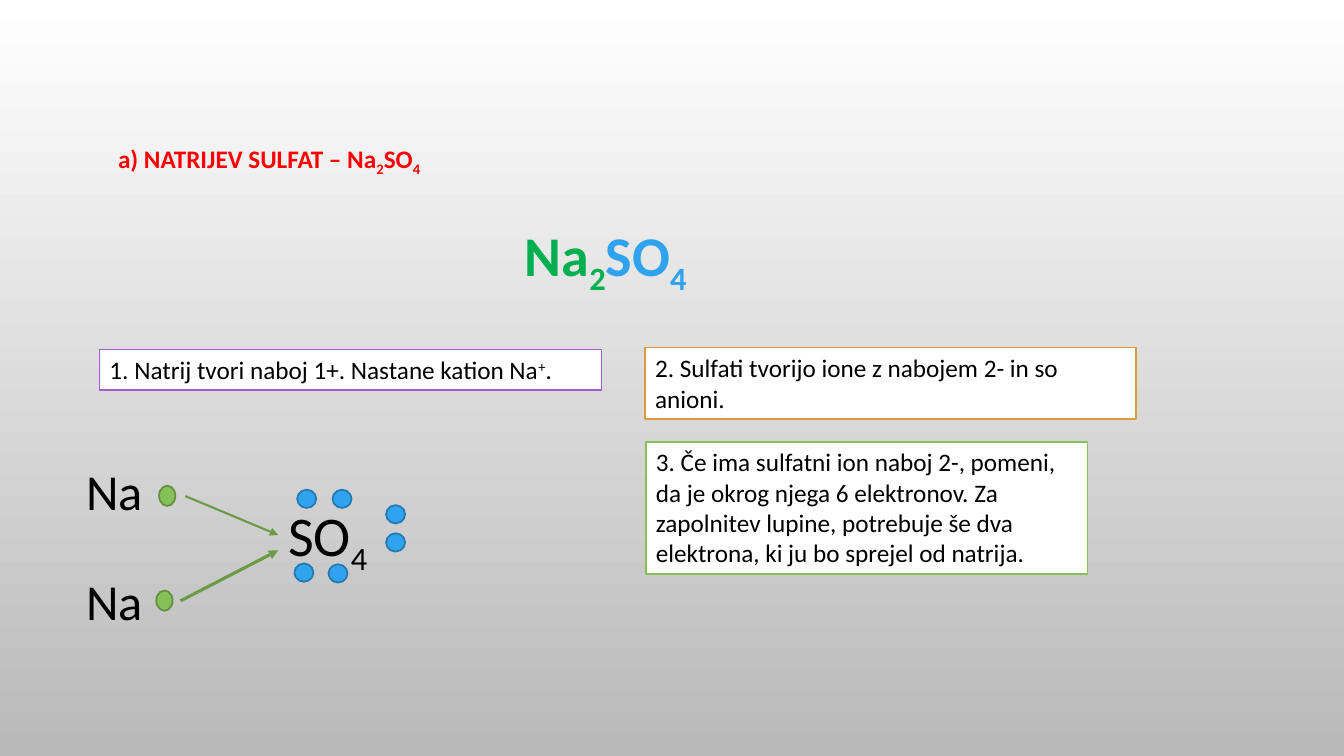
import dataclasses

import pptx
import pptx.dml.color
import pptx.enum.dml
import pptx.enum.shapes
import pptx.enum.text
import pptx.oxml
import pptx.oxml.ns
import pptx.util
from pptx.util import Cm

COLOURS = {
    "white": "FFFFFF", "grey": "B9B9B9", "black": "000000", "red": "FF0000",
    "sodium": "00B050", "sulfate": "2FA3EE", "sulfate edge": "2379B0",
    "electron": "86C157", "electron edge": "638F40", "arrow": "6B9B46",
    "purple": "A35DD1", "orange": "D99C3F",
}
SUB, SUPER = -25, 30
EDGE = 1.25


@dataclasses.dataclass
class Span:
    text: str
    colour: str = "black"
    baseline: int = 0


@dataclasses.dataclass
class Label:
    place: tuple[float, float, float, float]
    spans: list[Span]
    size: int = 18
    bold: bool = False
    edge: str | None = None


@dataclasses.dataclass
class Electrons:
    fill: str
    edge: str
    size: tuple[float, float]
    corners: list[tuple[float, float]]


@dataclasses.dataclass
class Arrow:
    start: tuple[float, float]
    end: tuple[float, float]
    weight: float


TITLE = Label((2.72, 3.48, 26.95, 1.02), [
    Span("a) NATRIJEV SULFAT – Na", "red"), Span("2", "red", SUB),
    Span("SO", "red"), Span("4", "red", SUB)], bold=True)
SULFATE_ION = Label((7.01, 12.5, 4.37, 1.96), [Span("SO"), Span("4", baseline=SUB)], 40)
LABELS = [
    Label((12.98, 5.44, 5.64, 1.96), [
        Span("Na", "sodium"), Span("2", "sodium", SUB),
        Span("SO", "sulfate"), Span("4", "sulfate", SUB)], 40, True),
    Label((2.51, 8.81, 12.65, 1.02), [
        Span("1. Natrij tvori naboj 1+. Nastane kation Na"),
        Span("+", baseline=SUPER), Span(".")], edge="purple"),
    Label((16.26, 8.76, 12.37, 1.8), [
        Span("2. Sulfati tvorijo ione z nabojem 2- in so anioni.")], edge="orange"),
    Label((16.28, 11.13, 11.13, 3.33), [
        Span("3. Če ima sulfatni ion naboj 2-, pomeni, da je okrog njega "
             "6 elektronov. Za zapolnitev lupine, potrebuje še dva elektrona, "
             "ki ju bo sprejel od natrija.")], edge="electron"),
    Label((1.93, 11.46, 2.11, 1.8), [Span("Na")], 36),
    Label((1.93, 14.25, 2.41, 1.8), [Span("Na")], 36),
]
SODIUM_ELECTRONS = Electrons(
    "electron", "electron edge", (0.41, 0.51), [(4.01, 12.24), (3.94, 14.88)])
SULFATE_ELECTRONS = Electrons("sulfate", "sulfate edge", (0.48, 0.46), [
    (7.49, 12.34), (8.38, 12.34), (9.73, 12.73),
    (9.73, 13.44), (7.42, 14.2), (8.28, 14.22)])
UPPER_ARROW = Arrow((4.67, 12.5), (7.01, 13.48), 1.5)
LOWER_ARROW = Arrow((4.55, 15.14), (7.01, 13.87), 2.25)


def colour(name: str) -> pptx.dml.color.RGBColor:
    return pptx.dml.color.RGBColor.from_string(COLOURS[name])


def paint(shape, fill: str, edge: str) -> None:
    shape.shadow.inherit = False
    shape.fill.solid()
    shape.fill.fore_color.rgb = colour(fill)
    shape.line.color.rgb = colour(edge)
    shape.line.width = pptx.util.Pt(EDGE)


def write(shape, label: Label) -> None:
    frame = shape.text_frame
    frame.word_wrap = True
    frame.auto_size = pptx.enum.text.MSO_AUTO_SIZE.SHAPE_TO_FIT_TEXT
    frame.vertical_anchor = pptx.enum.text.MSO_ANCHOR.TOP
    para = frame.paragraphs[0]
    para.alignment = pptx.enum.text.PP_ALIGN.LEFT
    for span in label.spans:
        run = para.add_run()
        run.text = span.text
        run.font.name = "Calibri"
        run.font.size = pptx.util.Pt(label.size)
        run.font.bold = label.bold
        run.font.color.rgb = colour(span.colour)
        if span.baseline:
            run.font._element.set("baseline", str(span.baseline * 1000))


def add_label(slide, label: Label):
    """Draw a plain text box, or a white rectangle when the label has an edge."""
    place = [Cm(length) for length in label.place]
    if label.edge:
        box = slide.shapes.add_shape(pptx.enum.shapes.MSO_SHAPE.RECTANGLE, *place)
        paint(box, "white", label.edge)
    else:
        box = slide.shapes.add_textbox(*place)
    write(box, label)
    return box


def add_electrons(slide, electrons: Electrons) -> None:
    for corner in electrons.corners:
        place = [Cm(length) for length in corner + electrons.size]
        dot = slide.shapes.add_shape(pptx.enum.shapes.MSO_SHAPE.OVAL, *place)
        paint(dot, electrons.fill, electrons.edge)


def add_arrow(slide, arrow: Arrow):
    points = [Cm(length) for length in arrow.start + arrow.end]
    connector = slide.shapes.add_connector(
        pptx.enum.shapes.MSO_CONNECTOR.STRAIGHT, *points)
    connector.line.color.rgb = colour("arrow")
    connector.line.width = pptx.util.Pt(arrow.weight)
    head = pptx.oxml.parse_xml(
        f'<a:tailEnd {pptx.oxml.ns.nsdecls("a")} type="triangle"/>')
    connector.line._get_or_add_ln().append(head)
    connector._element.spPr.append(
        pptx.oxml.parse_xml(f'<a:effectLst {pptx.oxml.ns.nsdecls("a")}/>'))
    return connector


def set_background(slide) -> None:
    fill = slide.background.fill
    fill.gradient()
    fill.gradient_angle = 270
    for stop, name, position in zip(fill.gradient_stops, ("white", "grey"), (0, 1)):
        stop.color.rgb = colour(name)
        stop.position = position


def main() -> None:
    deck = pptx.Presentation()
    deck.slide_width, deck.slide_height = Cm(33.87), Cm(19.05)
    slide = deck.slides.add_slide(deck.slide_layouts.get_by_name("Title Only"))
    set_background(slide)

    title = slide.shapes.title
    title.left, title.top, title.width, title.height = map(Cm, TITLE.place)
    write(title, TITLE)
    for label in LABELS:
        add_label(slide, label)
    sulfate_ion = add_label(slide, SULFATE_ION)
    add_electrons(slide, SODIUM_ELECTRONS)
    add_arrow(slide, UPPER_ARROW).end_connect(sulfate_ion, 1)
    add_arrow(slide, LOWER_ARROW)
    add_electrons(slide, SULFATE_ELECTRONS)

    deck.save("out.pptx")


if __name__ == "__main__":
    main()
